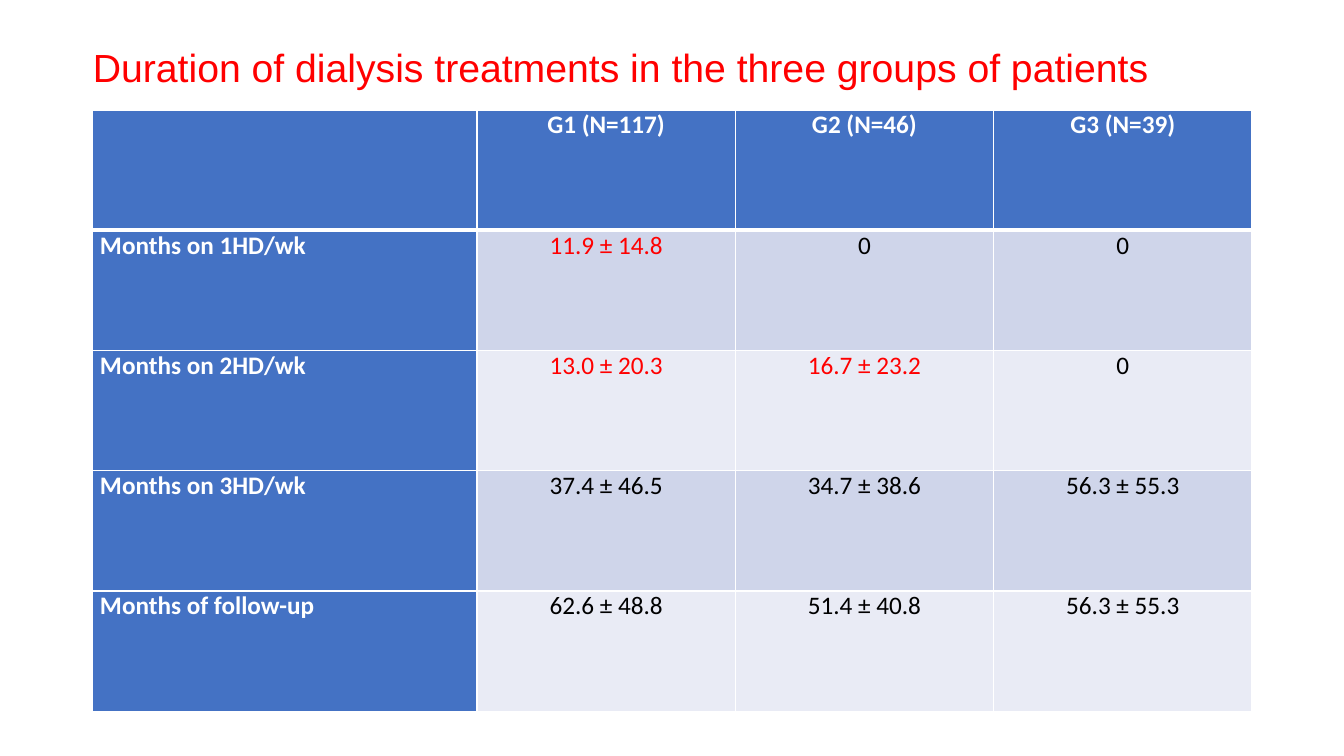
"""Build a slide with a table of dialysis treatment durations in three patient groups."""
import pptx
import pptx.util
import pptx.dml.color
import pptx.enum.text
import lxml.etree
from pptx.util import Cm, Pt

COLORS = {"head": "4472C4", "odd": "CFD5EA", "even": "E9EBF5",
          "white": "FFFFFF", "black": "000000", "red": "FF0000"}
ALIGN = pptx.enum.text.PP_ALIGN
ANCHOR = pptx.enum.text.MSO_ANCHOR
NS = "http://schemas.openxmlformats.org/drawingml/2006/main"


def rgb(name):
    return pptx.dml.color.RGBColor.from_string(COLORS[name])


def add_border(tc_pr, index, side, width):
    ln = lxml.etree.Element(f"{{{NS}}}ln{side}", w=str(Pt(width)))
    fill = lxml.etree.SubElement(ln, f"{{{NS}}}solidFill")
    lxml.etree.SubElement(fill, f"{{{NS}}}srgbClr", val=COLORS["white"])
    tc_pr.insert(index, ln)


prs = pptx.Presentation()
prs.slide_width, prs.slide_height = Cm(33.87), Cm(19.05)
s = prs.slides.add_slide(prs.slide_layouts[5])

title = s.shapes.title
title.left, title.top, title.width, title.height = Cm(2.34), Cm(1.02), Cm(29.21), Cm(1.47)
tf = title.text_frame
tf.text = "Duration of dialysis treatments in the three groups of patients"
frame_format = {"margin_left": 0, "margin_right": 0, "margin_top": 0, "margin_bottom": 0,
                "vertical_anchor": ANCHOR.MIDDLE, "word_wrap": True,
                "auto_size": pptx.enum.text.MSO_AUTO_SIZE.NONE}
for name, value in frame_format.items():
    setattr(tf, name, value)
p = tf.paragraphs[0]
p.alignment, p.line_spacing = ALIGN.LEFT, 0.9
font = p.runs[0].font
font.name, font.size, font.color.rgb = "Arial", Pt(28), rgb("red")

rows = [
    ["", "G1 (N=117)", "G2 (N=46)", "G3 (N=39)"],
    ["Months on 1HD/wk", "11.9 ± 14.8", "0", "0"],
    ["Months on 2HD/wk", "13.0 ± 20.3", "16.7 ± 23.2", "0"],
    ["Months on 3HD/wk", "37.4 ± 46.5", "34.7 ± 38.6", "56.3 ± 55.3"],
    ["Months of follow-up", "62.6 ± 48.8", "51.4 ± 40.8", "56.3 ± 55.3"],
]
red_cells = {(1, 1), (2, 1), (2, 2)}
cell_format = {"margin_left": Cm(0.18), "margin_right": Cm(0.18), "margin_top": 0,
               "margin_bottom": 0, "vertical_anchor": ANCHOR.TOP}

table = s.shapes.add_table(5, 4, Cm(2.34), Cm(2.77), Cm(29.21), Cm(15.15)).table
table.first_col = True
for col, width in zip(table.columns, [9.68, 6.51, 6.51, 6.51]):
    col.width = Cm(width)
for i, values in enumerate(rows):
    table.rows[i].height = Cm(3.03)
    for j, text in enumerate(values):
        cell = table.cell(i, j)
        is_head = i == 0 or j == 0
        for name, value in cell_format.items():
            setattr(cell, name, value)
        cell.fill.solid()
        cell.fill.fore_color.rgb = rgb("head" if is_head else "odd" if i % 2 else "even")
        widths = {"L": 1, "R": 1, "T": 3 if i == 1 else 1, "B": 3 if i == 0 else 1}
        for index, (side, width) in enumerate(widths.items()):
            add_border(cell.fill._xPr, index, side, width)
        p = cell.text_frame.paragraphs[0]
        p.alignment = ALIGN.CENTER if j else ALIGN.JUSTIFY
        p.space_after = Pt(11.2)
        if text:
            r = p.add_run()
            r.text = text
            color = "white" if is_head else "red" if (i, j) in red_cells else "black"
            for name, value in {"name": "Calibri", "size": Pt(18), "bold": is_head}.items():
                setattr(r.font, name, value)
            r.font.color.rgb = rgb(color)

prs.save("out.pptx")
